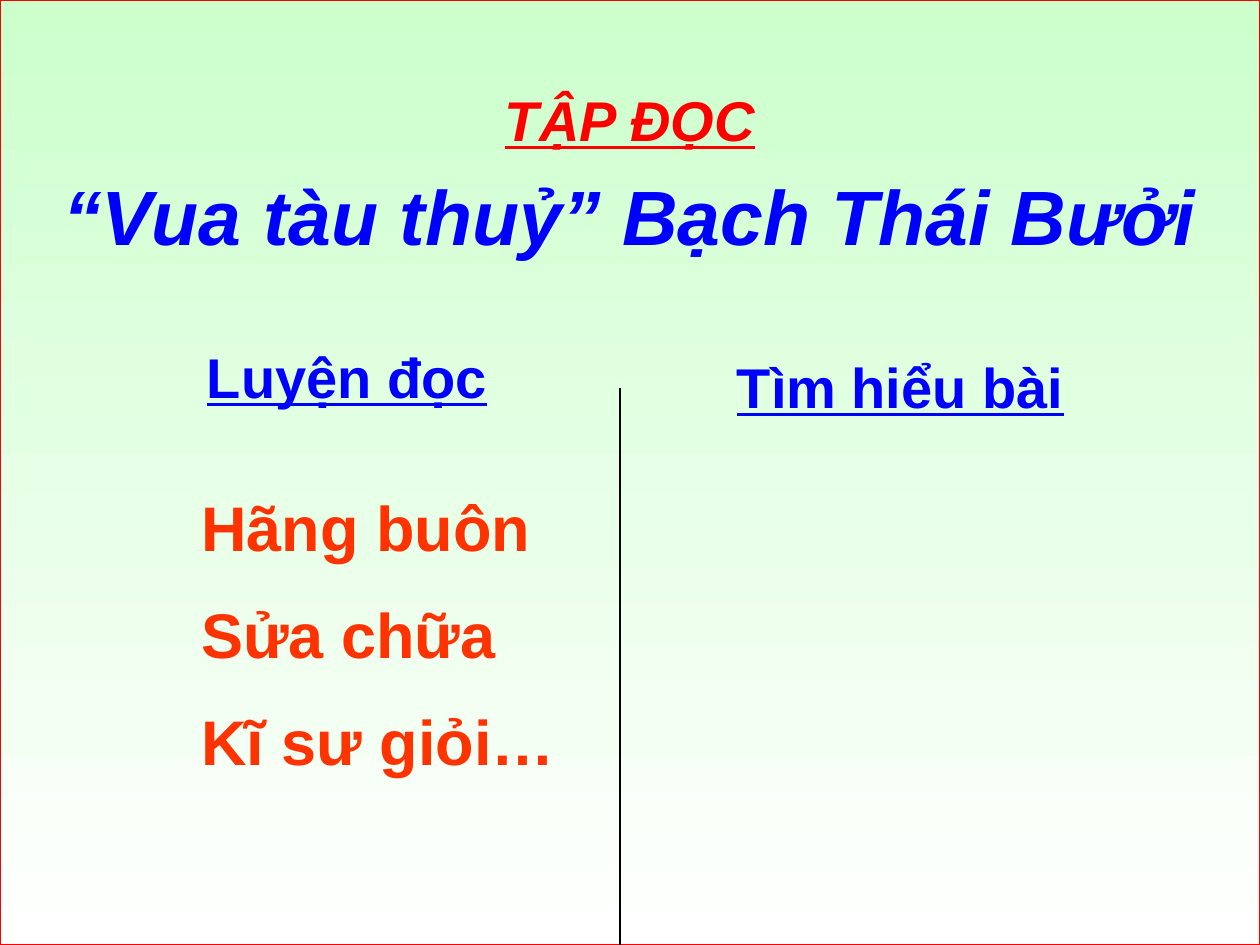
"""Builds a Vietnamese reading-lesson slide with a title and two columns."""
from pptx import Presentation, util as u
from pptx.dml.color import RGBColor
from pptx.enum import shapes, text
from pptx.oxml.ns import qn
from lxml import etree

COLORS = {"mint": "CCFFCC", "white": "FFFFFF", "red": "FF0000",
          "blue": "0000FF", "orange": "FF3300", "black": "000000"}


def rgb(name):
    return RGBColor.from_string(COLORS[name])


def add_text(p, words, size, color, italic=False, underline=False):
    r = p.add_run()
    r.text = words
    r.font.name = "Arial"
    r.font.size = u.Pt(size)
    r.font.bold = True
    r.font.italic = italic
    r.font.underline = underline
    r.font.color.rgb = rgb(color)


prs = Presentation()
prs.slide_width, prs.slide_height = u.Inches(10), u.Inches(7.5)
s = prs.slides.add_slide(prs.slide_layouts[5])

fill = s.background.fill
fill.gradient()
fill.gradient_angle = 270
for stop, name, position in zip(fill.gradient_stops, ("mint", "white"), (0, 1)):
    stop.color.rgb = rgb(name)
    stop.position = position

title = s.shapes.title
title.left, title.top = u.Inches(0), u.Inches(0)
title.width, title.height = prs.slide_width, prs.slide_height
title.line.color.rgb = rgb("red")
title.line.width = u.Pt(0.75)
tf = title.text_frame
tf.auto_size = text.MSO_AUTO_SIZE.NONE
tf.word_wrap = True
tf.vertical_anchor = text.MSO_ANCHOR.TOP
tf.margin_top = u.Inches(0.68)
lines = [("TẬP ĐỌC", 32, "red", True, 0),
         ("“Vua tàu thuỷ” Bạch Thái Bưởi", 44, "blue", False, 8.8)]
for i, (words, size, color, underline, before) in enumerate(lines):
    p = tf.add_paragraph() if i else tf.paragraphs[0]
    p.alignment = text.PP_ALIGN.CENTER
    p.space_before = u.Pt(before)
    add_text(p, words, size, color, italic=True, underline=underline)

divider = s.shapes.add_connector(shapes.MSO_CONNECTOR.STRAIGHT, u.Inches(4.92),
                                 u.Inches(3.08), u.Inches(4.92), u.Inches(7.5))
divider.line.color.rgb = rgb("black")
divider.line.width = u.Pt(0.75)
etree.SubElement(divider._element.spPr, qn("a:effectLst"))

center, left = text.PP_ALIGN.CENTER, text.PP_ALIGN.LEFT
boxes = [
    ((0.92, 2.67, 3.67, 0.63), ["Luyện đọc"], 32, "blue", True, center),
    ((5.75, 2.75, 2.83, 0.63), ["Tìm hiểu bài"], 32, "blue", True, left),
    ((1.5, 3.83, 4.5, 2.5), ["Hãng buôn", "Sửa chữa", "Kĩ sư giỏi…"],
     36, "orange", False, left),
]
for place, items, size, color, underline, align in boxes:
    tf = s.shapes.add_textbox(*map(u.Inches, place)).text_frame
    tf.word_wrap = True
    tf.auto_size = text.MSO_AUTO_SIZE.SHAPE_TO_FIT_TEXT
    for i, words in enumerate(items):
        p = tf.add_paragraph() if i else tf.paragraphs[0]
        p.alignment = align
        p.space_before = u.Pt(size / 2 if i else 0)
        add_text(p, words, size, color, underline=underline)

prs.save("out.pptx")
